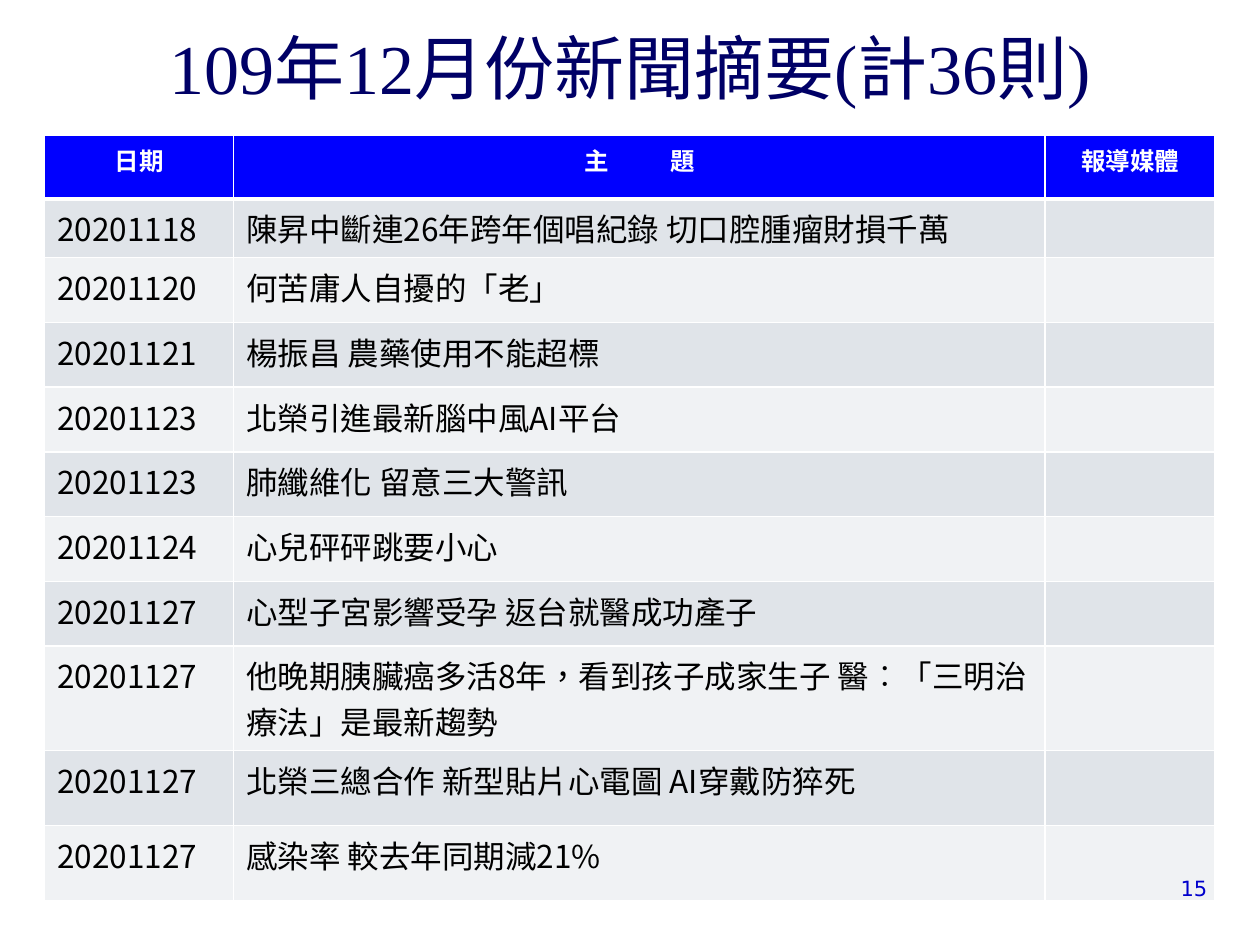
import pptx
import pptx.util
import pptx.oxml
import pptx.oxml.ns
import pptx.dml.color
import pptx.enum.lang
import pptx.enum.text

Pt = pptx.util.Pt
RGBColor = pptx.dml.color.RGBColor
PP_ALIGN = pptx.enum.text.PP_ALIGN
MSO_ANCHOR = pptx.enum.text.MSO_ANCHOR
qn = pptx.oxml.ns.qn

NAVY = RGBColor(0x00, 0x00, 0x66)
PAGE_BLUE = RGBColor(0x00, 0x00, 0xCC)
HEADER_BLUE = RGBColor(0x00, 0x00, 0xFF)
WHITE = RGBColor(0xFF, 0xFF, 0xFF)
BLACK = RGBColor(0x00, 0x00, 0x00)
BANDS = [RGBColor(0xE0, 0xE4, 0xE9), RGBColor(0xF0, 0xF2, 0xF4)]

CJK = "Noto Sans CJK SC"
TITLE_FONT = {"name": "Times New Roman", "size": Pt(40), "color": NAVY}
HEADER_FONT = {"name": CJK, "size": Pt(14), "bold": True, "color": WHITE}
BODY_FONT = {"name": CJK, "size": Pt(18), "bold": False, "color": BLACK,
             "language_id": pptx.enum.lang.MSO_LANGUAGE_ID.TRADITIONAL_CHINESE}
PAGE_FONT = {"name": "DejaVu Sans", "size": Pt(12), "color": PAGE_BLUE}

COL_WIDTHS = [108, 463.7, 97.2]
# The two-line headline needs the tallest row
ROW_HEIGHTS = [36.5, 33.5] + [37] * 6 + [59.5] + [43] * 2
HEADERS = ["日期", "主 題", "報導媒體"]
NEWS = [
    ("20201118", "陳昇中斷連26年跨年個唱紀錄 切口腔腫瘤財損千萬"),
    ("20201120", "何苦庸人自擾的「老」"),
    ("20201121", "楊振昌 農藥使用不能超標"),
    ("20201123", "北榮引進最新腦中風AI平台"),
    ("20201123", "肺纖維化 留意三大警訊"),
    ("20201124", "心兒砰砰跳要小心"),
    ("20201127", "心型子宮影響受孕 返台就醫成功產子"),
    ("20201127", "他晚期胰臟癌多活8年，看到孩子成家生子 醫︰「三明治療法」是最新趨勢"),
    ("20201127", "北榮三總合作 新型貼片心電圖 AI穿戴防猝死"),
    ("20201127", "感染率 較去年同期減21%"),
]


def add_run(p, text, fmt):
    r = p.add_run()
    r.text = text
    for key, value in fmt.items():
        if key == "color":
            r.font.color.rgb = value
        else:
            setattr(r.font, key, value)
    # East Asian characters use their own typeface
    ea = pptx.oxml.parse_xml(f'<a:ea {pptx.oxml.ns.nsdecls("a")} typeface="{CJK}"/>')
    r.font._element.find(qn("a:latin")).addnext(ea)
    return r


def add_text(slide, box, text, fmt, align, anchor):
    tf = slide.shapes.add_textbox(*map(Pt, box)).text_frame
    tf.word_wrap = True
    tf.vertical_anchor = anchor
    p = tf.paragraphs[0]
    p.alignment = align
    add_run(p, text, fmt)


def set_borders(cell, widths):
    tc_pr = cell._tc.get_or_add_tcPr()
    for side, width in widths.items():
        tc_pr.append(pptx.oxml.parse_xml(
            f'<a:ln{side} {pptx.oxml.ns.nsdecls("a")} w="{Pt(width)}">'
            f'<a:solidFill><a:srgbClr val="{WHITE}"/></a:solidFill></a:ln{side}>'))


def style_cell(cell, fill, top, bottom):
    set_borders(cell, {"L": 1, "R": 1, "T": top, "B": bottom})
    cell.fill.solid()
    cell.fill.fore_color.rgb = fill


def add_news_table(slide, box):
    table = slide.shapes.add_table(len(ROW_HEIGHTS), len(COL_WIDTHS), *map(Pt, box)).table
    for column, width in zip(table.columns, COL_WIDTHS):
        column.width = Pt(width)
    for row, height in zip(table.rows, ROW_HEIGHTS):
        row.height = Pt(height)

    # Header row
    for cell, text in zip(table.rows[0].cells, HEADERS):
        style_cell(cell, HEADER_BLUE, 1, 3)
        p = cell.text_frame.paragraphs[0]
        p.alignment = PP_ALIGN.CENTER
        first, gap, last = text.partition(" ")
        add_run(p, first, HEADER_FONT)
        if gap:
            # One widely spaced blank sets the two characters apart
            add_run(p, gap, HEADER_FONT).font._element.set("spc", "3200")
            add_run(p, last, HEADER_FONT)

    # News rows in alternating bands; the media column is empty
    for i, item in enumerate(NEWS):
        cells = list(table.rows[i + 1].cells)
        for cell in cells:
            style_cell(cell, BANDS[i % 2], 3 if i == 0 else 1, 1)
        for cell, text in zip(cells, item):
            add_run(cell.text_frame.paragraphs[0], text, BODY_FONT)


def main():
    prs = pptx.Presentation()
    prs.slide_width, prs.slide_height = Pt(720), Pt(540)
    slide = prs.slides.add_slide(prs.slide_layouts[6])

    # Title, table, page number
    add_text(slide, (45, 23.5, 630, 42), "109年12月份新聞摘要(計36則)",
             TITLE_FONT, PP_ALIGN.CENTER, MSO_ANCHOR.BOTTOM)
    add_news_table(slide, (25.5, 77.3, sum(COL_WIDTHS), sum(ROW_HEIGHTS)))
    add_text(slide, (643.5, 496.8, 53.5, 21.6), "15",
             PAGE_FONT, PP_ALIGN.RIGHT, MSO_ANCHOR.TOP)

    prs.save("out.pptx")


if __name__ == "__main__":
    main()
